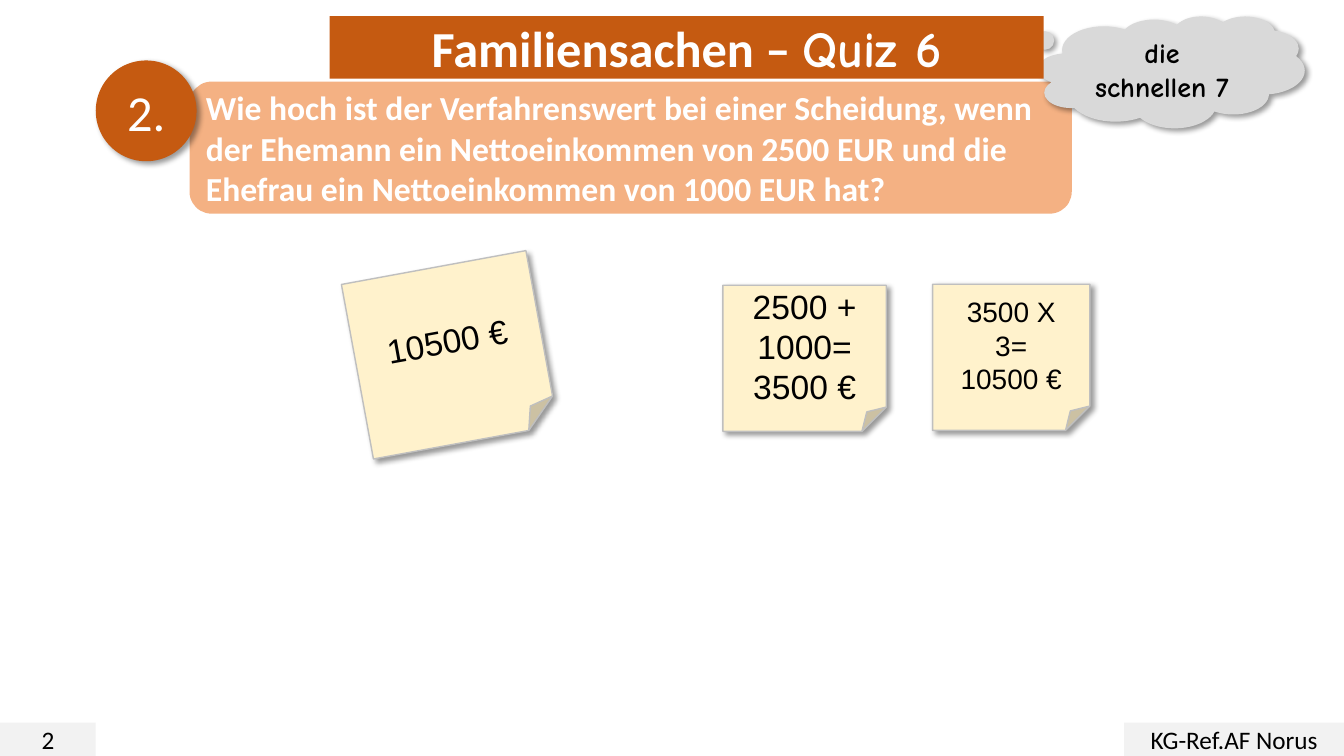
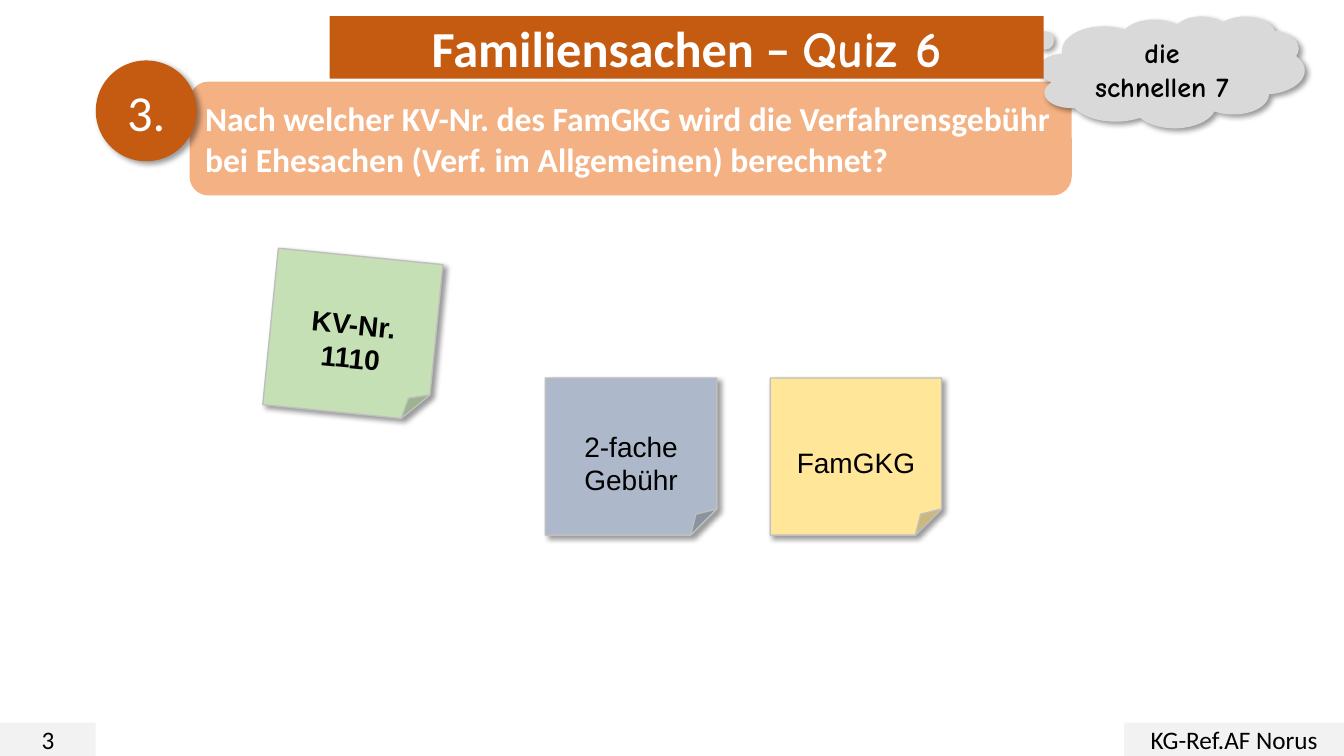
from dataclasses import dataclass

from lxml.etree import SubElement
from pptx import Presentation
from pptx.dml.color import RGBColor
from pptx.enum.shapes import MSO_SHAPE
from pptx.enum.text import MSO_ANCHOR, MSO_AUTO_SIZE, PP_ALIGN
from pptx.oxml import parse_xml
from pptx.oxml.ns import nsdecls, qn
from pptx.util import Inches, Pt

# Content
TITLE = ("Familiensachen – ", "Quiz 6")
BADGE = "die schnellen 7"
FOOTER = "KG-Ref.AF Norus"
FIRST_NUMBER = 2

# Note: lines, box (left, top, width, height), fill name, then optional format
QUESTIONS = [
    {
        "text": "Wie hoch ist der Verfahrenswert bei einer Scheidung, wenn "
                "der Ehemann ein Nettoeinkommen von 2500 EUR und die "
                "Ehefrau ein Nettoeinkommen von 1000 EUR hat?",
        "height": 1.31,
        "notes": [
            {"lines": ["10500 €"], "box": (3.53, 2.64, 1.86, 1.76),
             "fill": "cream", "size": "large", "rotation": -10.4},
            {"lines": ["3500 X", "3=", "10500 €"],
             "box": (9.25, 2.82, 1.56, 1.45), "fill": "cream"},
            {"lines": ["2500 +", "1000=", "3500 €"],
             "box": (7.17, 2.83, 1.62, 1.45), "fill": "cream", "size": "large"},
        ],
    },
    {
        "text": "Nach welcher KV-Nr. des FamGKG wird die Verfahrensgebühr "
                "bei Ehesachen (Verf. im Allgemeinen) berechnet?",
        "height": 1.13,
        "notes": [
            {"lines": ["KV-Nr.", "1110"], "box": (2.68, 2.54, 1.64, 1.56),
             "fill": "green", "bold": True, "rotation": 5.7, "top": 0.43},
            {"lines": ["2-fache", "Gebühr"], "box": (5.41, 3.75, 1.7, 1.56),
             "fill": "blue", "top": 0.43},
            {"lines": ["FamGKG"], "box": (7.64, 3.75, 1.7, 1.56),
             "fill": "yellow", "top": 0.43},
        ],
    },
]


@dataclass(frozen=True)
class Theme:
    # Colours
    accent: str = "C55A11"
    soft: str = "F4B183"
    band: str = "F2F2F2"
    cloud: str = "D9D9D9"
    edge: str = "BFBFBF"
    cream: str = "FFF2CC"
    green: str = "C5E0B4"
    blue: str = "ADB9CA"
    yellow: str = "FFE699"
    dark: str = "000000"
    light: str = "FFFFFF"
    # Fonts
    main: str = "Calibri"
    hand: str = "Comic Neue"
    note: str = "Arial"
    # Type sizes
    heading: int = 36
    large: int = 24
    medium: int = 20
    small: int = 18


T = Theme()
SLIDE_W, SLIDE_H = 13.33, 7.5
BAND_H = 0.33
FOOTER_W = 2.18


def rgb(value):
    return RGBColor.from_string(value)


def place(shape, box):
    for name, value in zip(("left", "top", "width", "height"), box):
        setattr(shape, name, Inches(value))


def write(shape, paragraphs, size, color=T.dark, font=T.main, bold=False,
          align=PP_ALIGN.CENTER):
    """Each paragraph is a list of (text, font) runs or a plain string."""
    tf = shape.text_frame
    tf.word_wrap = True
    tf.vertical_anchor = MSO_ANCHOR.MIDDLE
    for i, runs in enumerate(paragraphs):
        p = tf.paragraphs[0] if i == 0 else tf.add_paragraph()
        p.alignment = align
        for text, name in ([(runs, font)] if isinstance(runs, str) else runs):
            r = p.add_run()
            r.text = text
            style = {"name": name, "size": Pt(size), "bold": bold}
            for key, value in style.items():
                setattr(r.font, key, value)
            r.font.color.rgb = rgb(color)


def add_shadow(shape):
    effects = shape.element.spPr.find(qn("a:effectLst"))
    shadow = SubElement(effects, qn("a:outerShdw"), blurRad=str(Pt(4)),
                        dist=str(Pt(3)), dir=str(45 * 60000),
                        algn="tl", rotWithShape="0")
    color = SubElement(shadow, qn("a:srgbClr"), val=T.dark)
    SubElement(color, qn("a:alpha"), val="40000")


def add_box(shapes, kind, box, fill, line=None, shadow=False):
    sp = shapes.add_shape(kind, *map(Inches, box))
    sp.shadow.inherit = False
    sp.fill.solid()
    sp.fill.fore_color.rgb = rgb(fill)
    if line:
        sp.line.color.rgb = rgb(line)
        sp.line.width = Pt(1)
    else:
        sp.line.fill.background()
    if shadow:
        add_shadow(sp)
    return sp


def add_footer(s, number):
    bands = [(str(number), 0, 0.95), (FOOTER, SLIDE_W - FOOTER_W, FOOTER_W)]
    for text, left, width in bands:
        sp = add_box(s.shapes, MSO_SHAPE.RECTANGLE,
                     (left, SLIDE_H - BAND_H, width, BAND_H), T.band)
        write(sp, [text], T.small)


def add_question(s, number, question):
    group = s.shapes.add_group_shape()
    panel = add_box(group.shapes, MSO_SHAPE.ROUNDED_RECTANGLE,
                    (1.88, 0.81, 8.75, question["height"]), T.soft)
    write(panel, [question["text"]], T.large, T.light, bold=True,
          align=PP_ALIGN.LEFT)
    disc = add_box(group.shapes, MSO_SHAPE.OVAL, (0.95, 0.6, 1, 1), T.accent,
                   shadow=True)
    write(disc, [f"{number}."], T.heading, T.light)


def add_note(s, note):
    sp = add_box(s.shapes, MSO_SHAPE.FOLDED_CORNER, note["box"],
                 getattr(T, note["fill"]), line=T.edge, shadow=True)
    sp.rotation = note.get("rotation", 0)
    sp.text_frame.margin_top = Inches(note.get("top", 0.05))
    write(sp, note["lines"], getattr(T, note.get("size", "medium")),
          font=T.note, bold=note.get("bold", False))


def add_badge(s):
    cloud = add_box(s.shapes, MSO_SHAPE.CLOUD_CALLOUT,
                    (10.3, 0.16, 2.64, 1.11), T.cloud, shadow=True)
    cloud.adjustments[0] = -0.59
    cloud.adjustments[1] = -0.35
    write(cloud, [BADGE], T.medium, font=T.hand, bold=True)


def format_title(s):
    title = s.shapes.title
    place(title, (3.27, 0.16, 7.08, 0.62))
    title.element.spPr.insert(1, parse_xml(
        f'<a:prstGeom {nsdecls("a")} prst="roundRect"><a:avLst/></a:prstGeom>'))
    title.fill.solid()
    title.fill.fore_color.rgb = rgb(T.accent)
    title.text_frame.auto_size = MSO_AUTO_SIZE.NONE
    write(title, [list(zip(TITLE, (T.main, T.hand)))], T.heading, T.light,
          bold=True)
    # The title lies in front of the cloud
    title.element.getparent().append(title.element)


def main():
    prs = Presentation()
    prs.slide_width, prs.slide_height = Inches(SLIDE_W), Inches(SLIDE_H)
    for number, question in enumerate(QUESTIONS, FIRST_NUMBER):
        s = prs.slides.add_slide(prs.slide_layouts[5])
        add_footer(s, number)
        add_question(s, number, question)
        for note in question["notes"]:
            add_note(s, note)
        add_badge(s)
        format_title(s)
    prs.save("out.pptx")


if __name__ == "__main__":
    main()
